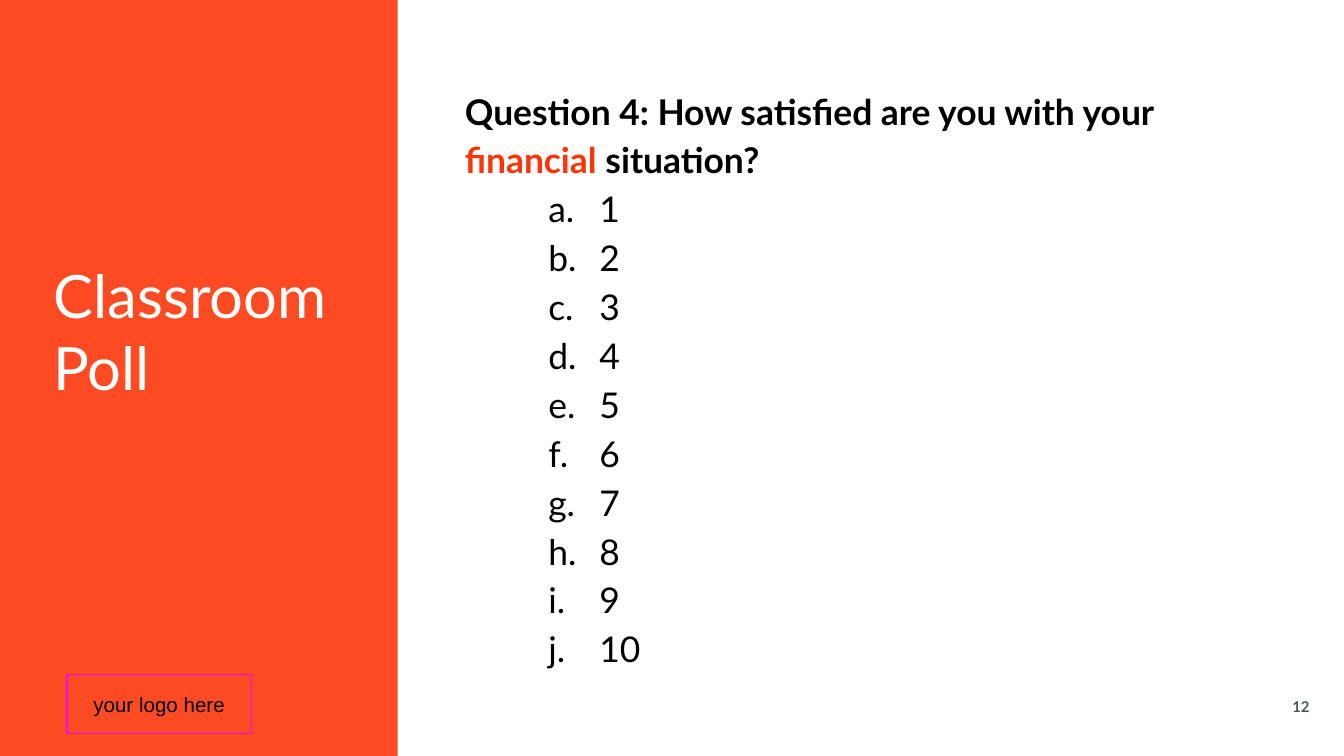
from lxml import etree
from pptx import Presentation
from pptx.dml.color import RGBColor
from pptx.enum.shapes import MSO_SHAPE
from pptx.enum.text import MSO_ANCHOR, PP_ALIGN
from pptx.oxml.ns import qn
from pptx.util import Inches, Pt

RECTANGLE = MSO_SHAPE.RECTANGLE
MIDDLE, TOP = MSO_ANCHOR.MIDDLE, MSO_ANCHOR.TOP
LEFT, CENTER = PP_ALIGN.LEFT, PP_ALIGN.CENTER
COLORS = {"orange": "FC3407", "white": "FFFFFF", "black": "000000",
          "gray": "4F5859", "magenta": "FF00FF"}


def set_frame(shape, anchor, inset):
    frame = shape.text_frame
    frame.word_wrap = True
    frame.vertical_anchor = anchor
    frame.margin_left = frame.margin_right = Inches(inset)
    frame.margin_top = frame.margin_bottom = Inches(inset)
    return frame


def add_span(para, text, size, color, bold=False, font="Lato"):
    span = para.add_run()
    span.text = text
    span.font.name = font
    span.font.size = Pt(size)
    span.font.bold = bold
    span.font.color.rgb = RGBColor.from_string(COLORS[color])


# Widescreen page, 16 to 9
deck = Presentation()
deck.slide_width = Inches(10)
deck.slide_height = Inches(10 * 9 / 16)
page = deck.slides.add_slide(deck.slide_layouts[6])

# Poll question
poll = page.shapes.add_textbox(Inches(3.46), Inches(0.62), Inches(5.54), Inches(3.63))
poll_frame = set_frame(poll, TOP, 0)
question = poll_frame.paragraphs[0]
question.line_spacing = 1.15
for text, color in [("Question 4: How satisfied are you with your ", "black"),
                    ("financial", "orange"), (" situation?", "black")]:
    add_span(question, text, 19, color, bold=True)

# Lettered answers
for score in range(1, 11):
    answer = poll_frame.add_paragraph()
    answer.level = 1
    answer.line_spacing = 1.15
    props = answer._p.get_or_add_pPr()
    props.set("marL", str(Inches(1)))
    props.set("indent", str(Inches(-0.38)))
    bullet_color = etree.SubElement(props, qn("a:buClr"))
    etree.SubElement(bullet_color, qn("a:srgbClr"), val=COLORS["black"])
    etree.SubElement(props, qn("a:buFont"), typeface="Lato")
    etree.SubElement(props, qn("a:buAutoNum"), type="alphaLcPeriod")
    add_span(answer, str(score), 19, "black")

# Sidebar with the slide title
sidebar = page.shapes.add_shape(RECTANGLE, 0, 0, Inches(2.96), deck.slide_height)
sidebar.shadow.inherit = False
sidebar.fill.solid()
sidebar.fill.fore_color.rgb = RGBColor.from_string(COLORS["orange"])
sidebar_color = sidebar._element.spPr.find(qn("a:solidFill")).find(qn("a:srgbClr"))
etree.SubElement(sidebar_color, qn("a:alpha"), val="89000")
sidebar.line.fill.background()
sidebar_frame = set_frame(sidebar, MIDDLE, 0.4)
sidebar_frame.margin_bottom = Inches(1.11)  # lifts the title above the middle
title = sidebar_frame.paragraphs[0]
title.alignment = LEFT
add_span(title, "Classroom Poll", 32, "white")

# Slide number
number = page.shapes.add_textbox(Inches(9.51), Inches(5.14), Inches(0.34), Inches(0.24))
number_para = set_frame(number, MIDDLE, 0).paragraphs[0]
number_para.alignment = CENTER
add_span(number_para, "12", 8, "gray", bold=True)

# Logo placeholder box
logo_box = page.shapes.add_shape(RECTANGLE, Inches(0.5), Inches(5.02),
                                 Inches(1.37), Inches(0.44))
logo_box.shadow.inherit = False
logo_box.fill.background()
logo_box.line.color.rgb = RGBColor.from_string(COLORS["magenta"])
logo_box.line.width = Pt(0.75)
logo_para = set_frame(logo_box, MIDDLE, 0.1).paragraphs[0]
logo_para.alignment = CENTER
add_span(logo_para, "your logo here", 11, "black", font="Arial")

deck.save("out.pptx")
